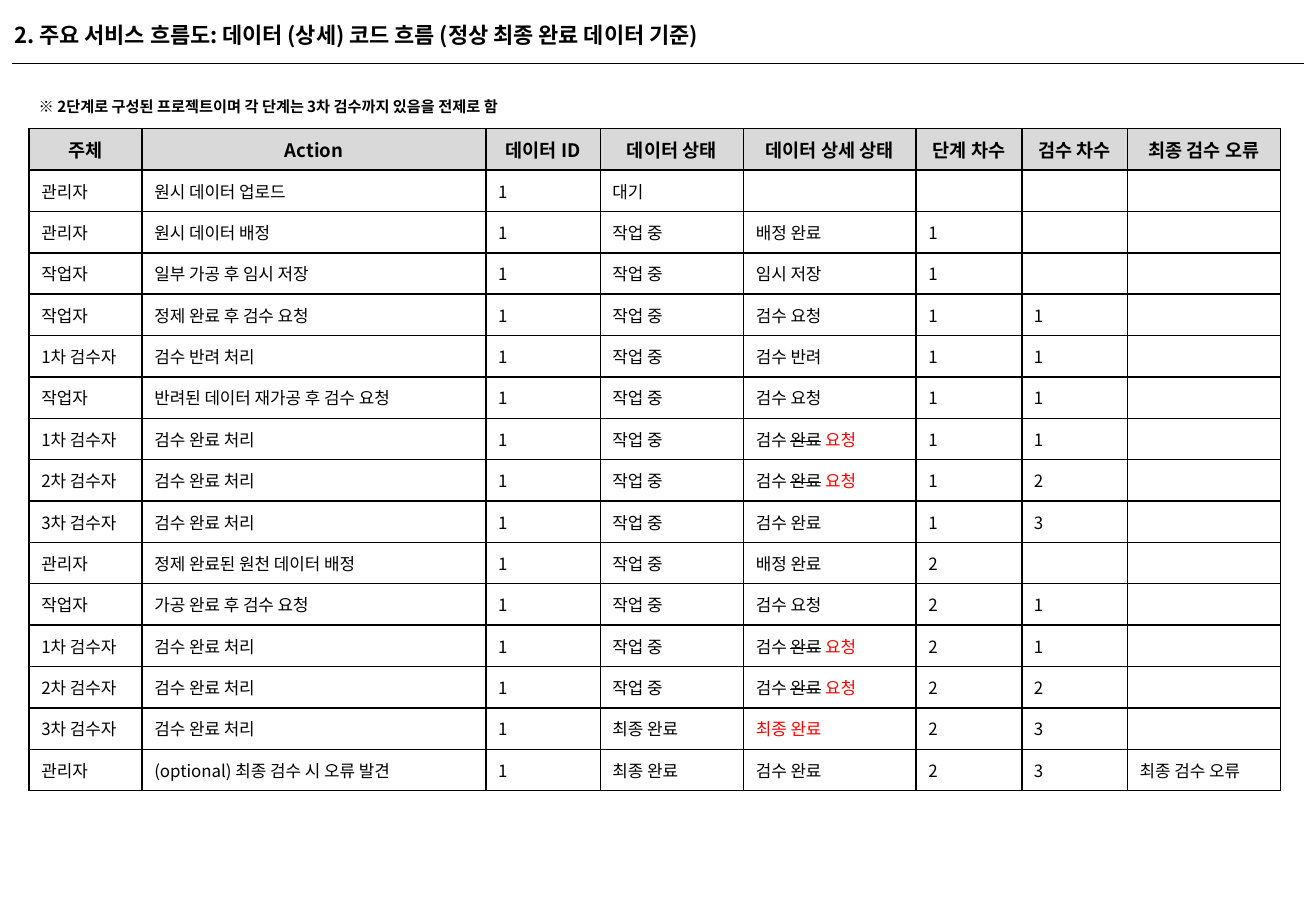
"""Builds the data status code flow slide."""
from lxml import etree
from pptx import Presentation
from pptx import util as u
from pptx.dml.color import RGBColor
from pptx.enum import shapes, text
from pptx.oxml import ns

BLACK = RGBColor(0x00, 0x00, 0x00)
RED = RGBColor(0xFF, 0x00, 0x00)
GRAY = RGBColor(0xD9, 0xD9, 0xD9)
WHITE = RGBColor(0xFF, 0xFF, 0xFF)
FONT = "Noto Sans CJK KR"

TITLE = {"size": u.Pt(13), "bold": True}
NOTE = {"size": u.Pt(9), "bold": True}
HEAD = {"size": u.Pt(11), "bold": True}
BODY = {"size": u.Pt(10), "bold": False}

WIDTHS = [0.93, 2.83, 0.94, 1.18, 1.42, 0.87, 0.87, 1.26]
HEADS = ["주체", "Action", "데이터 ID", "데이터 상태", "데이터 상세 상태",
         "단계 차수", "검수 차수", "최종 검수 오류"]
ASK = [("검수 ", BLACK, False), ("완료", BLACK, True), (" 요청", RED, False)]
DONE = [("최종 완료", RED, False)]
ROWS = [
    ["관리자", "원시 데이터 업로드", "1", "대기", "", "", "", ""],
    ["관리자", "원시 데이터 배정", "1", "작업 중", "배정 완료", "1", "", ""],
    ["작업자", "일부 가공 후 임시 저장", "1", "작업 중", "임시 저장", "1", "", ""],
    ["작업자", "정제 완료 후 검수 요청", "1", "작업 중", "검수 요청", "1", "1", ""],
    ["1차 검수자", "검수 반려 처리", "1", "작업 중", "검수 반려", "1", "1", ""],
    ["작업자", "반려된 데이터 재가공 후 검수 요청", "1", "작업 중", "검수 요청", "1", "1", ""],
    ["1차 검수자", "검수 완료 처리", "1", "작업 중", ASK, "1", "1", ""],
    ["2차 검수자", "검수 완료 처리", "1", "작업 중", ASK, "1", "2", ""],
    ["3차 검수자", "검수 완료 처리", "1", "작업 중", "검수 완료", "1", "3", ""],
    ["관리자", "정제 완료된 원천 데이터 배정", "1", "작업 중", "배정 완료", "2", "", ""],
    ["작업자", "가공 완료 후 검수 요청", "1", "작업 중", "검수 요청", "2", "1", ""],
    ["1차 검수자", "검수 완료 처리", "1", "작업 중", ASK, "2", "1", ""],
    ["2차 검수자", "검수 완료 처리", "1", "작업 중", ASK, "2", "2", ""],
    ["3차 검수자", "검수 완료 처리", "1", "최종 완료", DONE, "2", "3", ""],
    ["관리자", "(optional) 최종 검수 시 오류 발견", "1", "최종 완료", "검수 완료",
     "2", "3", "최종 검수 오류"],
]


def add_node(parent, tag, **attrs):
    """Append an XML child and return it."""
    return etree.SubElement(parent, ns.qn(tag), attrs)


def write(para, parts, style):
    """Write a string or a list of (words, colour, strike) runs."""
    if not parts:
        add_node(para._p, "a:endParaRPr", sz=str(int(style["size"].pt * 100)))
        return
    if isinstance(parts, str):
        parts = [(parts, BLACK, False)]
    for words, color, strike in parts:
        run = para.add_run()
        run.text = words
        for key, value in {**style, "name": FONT}.items():
            setattr(run.font, key, value)
        run.font.color.rgb = color
        props = run._r.get_or_add_rPr()
        add_node(props, "a:ea", typeface=FONT)
        if strike:
            props.set("strike", "sngStrike")


def add_label(slide, box, words, style, wrap=True, space=1.0):
    """Add a text box with one line of words."""
    frame = slide.shapes.add_textbox(*map(u.Inches, box)).text_frame
    frame.word_wrap = wrap
    frame.auto_size = text.MSO_AUTO_SIZE.SHAPE_TO_FIT_TEXT
    para = frame.paragraphs[0]
    para.line_spacing = space
    write(para, words, style)


def add_rule(slide, ends):
    """Add a thin black line."""
    line = slide.shapes.add_connector(
        shapes.MSO_CONNECTOR.STRAIGHT, *map(u.Inches, ends))
    line.line.color.rgb = BLACK
    line.line.width = u.Pt(0.75)
    add_node(line._element.spPr, "a:effectLst")


def set_edges(cell):
    """Draw a black border on all four sides of a cell."""
    props = cell._tc.get_or_add_tcPr()
    for tag in ("a:lnL", "a:lnR", "a:lnT", "a:lnB"):
        edge = add_node(props, tag, w=str(u.Pt(1)))
        fill = add_node(edge, "a:solidFill")
        add_node(fill, "a:srgbClr", val=str(BLACK))


def fill_cell(cell, parts, style, color, align):
    """Set the border, fill and words of a cell."""
    set_edges(cell)
    cell.fill.solid()
    cell.fill.fore_color.rgb = color
    cell.vertical_anchor = text.MSO_ANCHOR.MIDDLE
    para = cell.text_frame.paragraphs[0]
    para.alignment = align
    write(para, parts, style)


def add_grid(slide, box):
    """Add the table of steps and their codes."""
    lines = [HEADS] + ROWS
    grid = slide.shapes.add_table(
        len(lines), len(WIDTHS), *map(u.Inches, box)).table
    for col, width in zip(grid.columns, WIDTHS):
        col.width = u.Inches(width)
    for row, line in enumerate(lines):
        look = ((BODY, WHITE, text.PP_ALIGN.LEFT) if row
                else (HEAD, GRAY, text.PP_ALIGN.CENTER))
        for col, parts in enumerate(line):
            fill_cell(grid.cell(row, col), parts, *look)


def main():
    """Build and save the slide."""
    deck = Presentation()
    deck.slide_width, deck.slide_height = u.Inches(10.83), u.Inches(7.5)
    slide = deck.slides.add_slide(deck.slide_layouts[6])
    add_label(slide, (0.02, 0.13, 10.52, 0.32),
              "2. 주요 서비스 흐름도: 데이터 (상세) 코드 흐름 (정상 최종 완료 데이터 기준)", TITLE)
    add_rule(slide, (0.1, 0.52, 10.73, 0.52))
    add_grid(slide, (0.24, 1.06, 10.3, 5.45))
    add_label(slide, (0.22, 0.68, 4.42, 0.3),
              "※ 2단계로 구성된 프로젝트이며 각 단계는 3차 검수까지 있음을 전제로 함",
              NOTE, wrap=False, space=1.5)
    deck.save("out.pptx")


if __name__ == "__main__":
    main()
